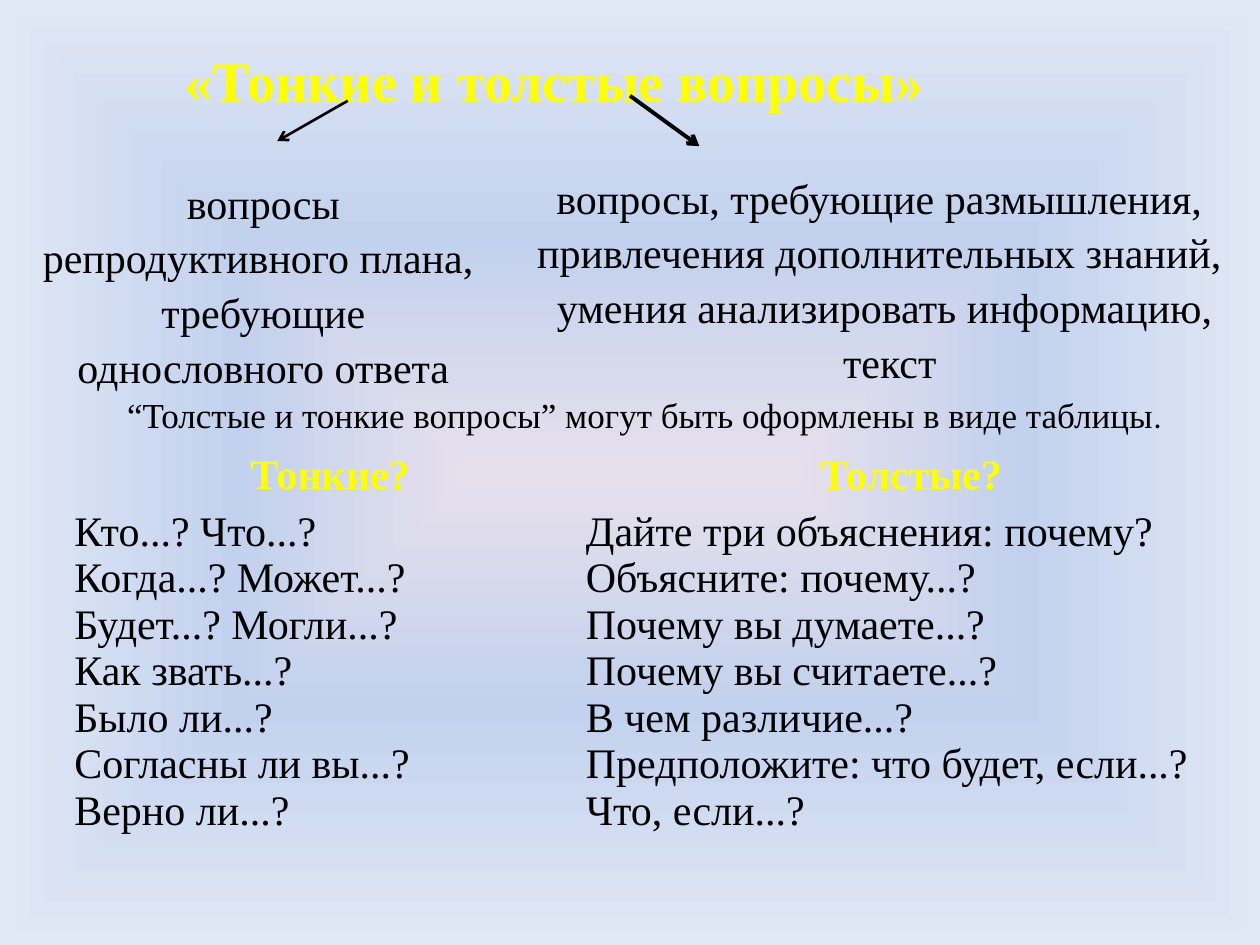
"""Build the slide about thin and thick questions."""
from dataclasses import dataclass

from lxml.etree import SubElement
from pptx import Presentation
from pptx.dml.color import RGBColor
from pptx.enum.shapes import MSO_CONNECTOR
from pptx.enum.text import MSO_ANCHOR, MSO_AUTO_SIZE, PP_ALIGN
from pptx.oxml import parse_xml
from pptx.oxml.ns import nsdecls, qn
from pptx.util import Inches, Pt

FONT = "Times New Roman"
BLACK = "000000"
YELLOW = "FFFF00"
NO_TABLE_STYLE = "{2D5ABB26-0587-4C30-8999-92F81FD0307C}"
GRADIENT_STOPS = ((0, "E6E0EC"), (50, "C2D1ED"), (100, "E1E8F5"))


@dataclass
class TextBlock:
    left: float
    top: float
    width: float
    height: float
    lines: list[str]
    size: int = 24
    color: str = BLACK
    bold: bool = False
    align: PP_ALIGN = PP_ALIGN.CENTER
    wrap: bool = False


@dataclass
class Arrow:
    start: tuple[float, float]
    end: tuple[float, float]
    weight: float


@dataclass
class QuestionColumn:
    heading: str
    width: float
    questions: list[str]


TITLE = TextBlock(1.22, 0.26, 6.36, 0.72, ["«Тонкие и толстые вопросы»"], 32, YELLOW, True)
CAPTION = TextBlock(
    0.91, 3.04, 8.49, 0.48,
    ["“Толстые и тонкие вопросы” могут быть оформлены в виде таблицы"],
    size=20, align=PP_ALIGN.LEFT,
)
DEFINITIONS = [
    TextBlock(0.2, 1.32, 3.78, 1.72,
              ["вопросы репродуктивного плана, ", "требующие однословного ответа"], wrap=True),
    TextBlock(4.13, 1.28, 5.78, 1.72,
              ["вопросы, требующие размышления, ", "привлечения дополнительных знаний, ",
               "умения анализировать информацию,", " текст"]),
]
ARROWS = [
    Arrow((2.76, 0.8), (2.2, 1.12), 1.5),
    Arrow((5, 0.76), (5.55, 1.16), 2.25),
]
COLUMNS = [
    QuestionColumn("Тонкие?", 4.06, [
        "Кто...? Что...?", "Когда...? Может...?", "Будет...? Могли...?", "Как звать...?",
        "Было ли...?", "Согласны ли вы...?", "Верно ли...?"]),
    QuestionColumn("Толстые?", 5.16, [
        "Дайте три объяснения: почему?", "Объясните: почему...?", "Почему вы думаете...?",
        "Почему вы считаете...?", "В чем различие...?", "Предположите: что будет, если...?",
        "Что, если...?"]),
]


def rgb(value: str) -> RGBColor:
    """Turn a hex string into a colour."""
    return RGBColor.from_string(value)


def format_run(run, size: int, color: str, bold: bool = False, font: str = FONT) -> None:
    """Set the typeface, size, colour and weight of a run."""
    run.font.name = font
    run.font.size = Pt(size)
    run.font.color.rgb = rgb(color)
    run.font.bold = bold


def write_lines(text_frame, lines: list[str], size: int, color: str, bold: bool,
                align: PP_ALIGN, spacing: float = 1.0) -> None:
    """Fill a text frame with one paragraph a line."""
    text_frame.text = "\n".join(lines)
    for paragraph in text_frame.paragraphs:
        paragraph.alignment = align
        paragraph.line_spacing = spacing
        for run in paragraph.runs:
            format_run(run, size, color, bold)


def place_text(shape, block: TextBlock) -> None:
    """Move a shape to its block and write the text."""
    shape.left, shape.top = Inches(block.left), Inches(block.top)
    shape.width, shape.height = Inches(block.width), Inches(block.height)
    text_frame = shape.text_frame
    text_frame.word_wrap = block.wrap
    text_frame.auto_size = MSO_AUTO_SIZE.NONE
    text_frame.vertical_anchor = MSO_ANCHOR.TOP
    write_lines(text_frame, block.lines, block.size, block.color, block.bold, block.align, 1.09)


def add_text(slide, block: TextBlock):
    """Add a text box for a block."""
    shape = slide.shapes.add_textbox(0, 0, 0, 0)
    place_text(shape, block)
    return shape


def add_arrow(slide, arrow: Arrow) -> None:
    """Add a black line with an open arrowhead at its end."""
    points = [Inches(value) for value in (*arrow.start, *arrow.end)]
    connector = slide.shapes.add_connector(MSO_CONNECTOR.STRAIGHT, *points)
    connector.line.color.rgb = rgb(BLACK)
    connector.line.width = Pt(arrow.weight)
    SubElement(connector.line._get_or_add_ln(), qn("a:tailEnd"), type="arrow")
    SubElement(connector.element.spPr, qn("a:effectLst"))


def add_question_table(slide, columns: list[QuestionColumn]) -> None:
    """Add the table with a heading and a list of questions in each column."""
    width = sum(column.width for column in columns)
    frame = slide.shapes.add_table(
        2, len(columns), Inches(0.59), Inches(3.59), Inches(width), Inches(3.59))
    table = frame.table
    table.first_row = table.horz_banding = False
    frame.element.find(".//" + qn("a:tableStyleId")).text = NO_TABLE_STYLE
    table.rows[0].height, table.rows[1].height = Inches(0.45), Inches(3.14)
    for index, column in enumerate(columns):
        table.columns[index].width = Inches(column.width)
        heading, body = table.cell(0, index), table.cell(1, index)
        for cell in (heading, body):
            cell.fill.background()
            cell.margin_left = cell.margin_right = cell.margin_top = cell.margin_bottom = 0
        write_lines(heading.text_frame, [column.heading], 24, YELLOW, True, PP_ALIGN.CENTER)
        write_lines(body.text_frame, column.questions, 24, BLACK, False, PP_ALIGN.LEFT)


def set_background(slide) -> None:
    """Give the slide a gradient that spreads from its centre."""
    stops = "".join(
        f'<a:gs pos="{position * 1000}"><a:srgbClr val="{color}"/></a:gs>'
        for position, color in GRADIENT_STOPS)
    background = parse_xml(
        f'<p:bg {nsdecls("p", "a")}><p:bgPr><a:gradFill rotWithShape="1">'
        f'<a:gsLst>{stops}</a:gsLst><a:path path="shape">'
        '<a:fillToRect l="50000" t="50000" r="50000" b="50000"/></a:path>'
        '</a:gradFill><a:effectLst/></p:bgPr></p:bg>')
    slide.element.cSld.insert(0, background)


def main() -> None:
    """Create and save the presentation."""
    presentation = Presentation()
    presentation.slide_width, presentation.slide_height = Inches(10), Inches(7.5)
    slide = presentation.slides.add_slide(presentation.slide_layouts[5])
    set_background(slide)
    add_question_table(slide, COLUMNS)
    place_text(slide.shapes.title, TITLE)
    for arrow in ARROWS:
        add_arrow(slide, arrow)
    for definition in DEFINITIONS:
        add_text(slide, definition)
    caption = add_text(slide, CAPTION)
    period = caption.text_frame.paragraphs[0].add_run()
    period.text = "."
    format_run(period, 18, BLACK, font="Calibri")
    presentation.save("out.pptx")


if __name__ == "__main__":
    main()
